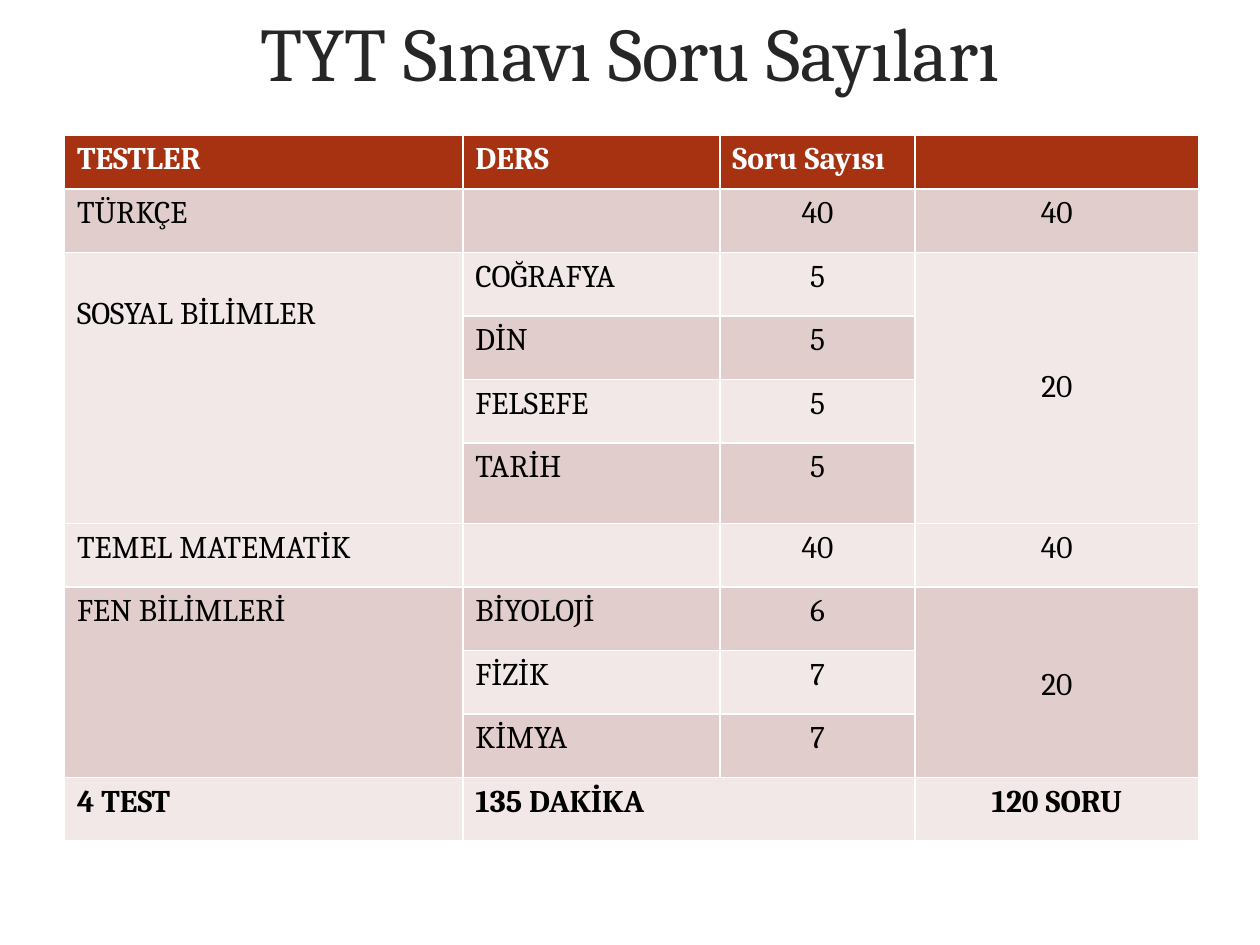
from pptx import Presentation
from pptx.dml.color import RGBColor
from pptx.enum.text import MSO_ANCHOR, PP_ALIGN
from pptx.util import Cm, Pt

COLORS = {
    "title": "262626",
    "header": "A63212",
    "header_text": "FFFFFF",
    "dark_band": "E1CECC",
    "light_band": "F1E8E7",
    "text": "000000",
}
FONT = "Cambria"
COLUMN_WIDTHS = [8.03, 5.18, 3.94, 5.71]
HEADER_HEIGHT, ROW_HEIGHT, TARIH_HEIGHT = 1.09, 1.28, 1.62
TARIH_ROW = 5
TOP_MARGIN, LINE_HEIGHT = 0.13, 0.74

ROWS = [
    ["TESTLER", "DERS", "Soru Sayısı", ""],
    ["TÜRKÇE", "", "40", "40"],
    ["SOSYAL BİLİMLER", "COĞRAFYA", "5", "20"],
    ["", "DİN", "5", ""],
    ["", "FELSEFE", "5", ""],
    ["", "TARİH", "5", ""],
    ["TEMEL MATEMATİK", "", "40", "40"],
    ["FEN BİLİMLERİ", "BİYOLOJİ", "6", "20"],
    ["", "FİZİK", "7", ""],
    ["", "KİMYA", "7", ""],
    ["4 TEST", "135 DAKİKA", "", "120 SORU"],
]
# First and last cell of each merged block, as (row, column)
MERGES = [
    ((2, 0), (5, 0)),
    ((2, 3), (5, 3)),
    ((7, 0), (9, 0)),
    ((7, 3), (9, 3)),
    ((10, 1), (10, 2)),
]
# Text lines by which the text of a merged cell is lowered
LOWERED = {(2, 0): 1, (2, 3): 3, (7, 3): 2}


def add_span(para, text, size, color, bold=False):
    span = para.add_run()
    span.text = text
    span.font.name = FONT
    span.font.size = Pt(size)
    span.font.bold = bold
    span.font.color.rgb = RGBColor.from_string(COLORS[color])


def add_title(page, text):
    box = page.shapes.title
    box.left, box.top, box.width, box.height = Cm(1.27), Cm(0.33), Cm(22.86), Cm(1.4)
    box.text_frame.vertical_anchor = MSO_ANCHOR.MIDDLE
    para = box.text_frame.paragraphs[0]
    para.alignment = PP_ALIGN.CENTER
    add_span(para, text, 43.2, "title")


def band_color(row):
    if row == 0:
        return "header"
    return "dark_band" if row % 2 else "light_band"


def fill_cell(cell, row, column, text):
    cell.fill.solid()
    cell.fill.fore_color.rgb = RGBColor.from_string(COLORS[band_color(row)])
    cell.margin_top = Cm(TOP_MARGIN + LINE_HEIGHT * LOWERED.get((row, column), 0))
    para = cell.text_frame.paragraphs[0]
    if row > 0 and column >= 2:
        para.alignment = PP_ALIGN.CENTER
    if text:
        color = "text" if row else "header_text"
        add_span(para, text, 18, color, bold=row in (0, len(ROWS) - 1))


def add_question_table(page):
    heights = [HEADER_HEIGHT] + [ROW_HEIGHT] * (len(ROWS) - 1)
    heights[TARIH_ROW] = TARIH_HEIGHT
    frame = page.shapes.add_table(
        len(ROWS), len(COLUMN_WIDTHS), Cm(1.3), Cm(2.72),
        Cm(sum(COLUMN_WIDTHS)), Cm(sum(heights)))
    table = frame.table
    for column, width in zip(table.columns, COLUMN_WIDTHS):
        column.width = Cm(width)
    for row, height in zip(table.rows, heights):
        row.height = Cm(height)
    for first, last in MERGES:
        table.cell(*first).merge(table.cell(*last))
    for row, texts in enumerate(ROWS):
        for column, text in enumerate(texts):
            fill_cell(table.cell(row, column), row, column, text)


def main():
    deck = Presentation()
    deck.slide_width, deck.slide_height = Cm(25.4), Cm(19.05)
    page = deck.slides.add_slide(deck.slide_layouts[5])
    add_title(page, "TYT Sınavı Soru Sayıları")
    add_question_table(page)
    deck.save("out.pptx")


if __name__ == "__main__":
    main()
